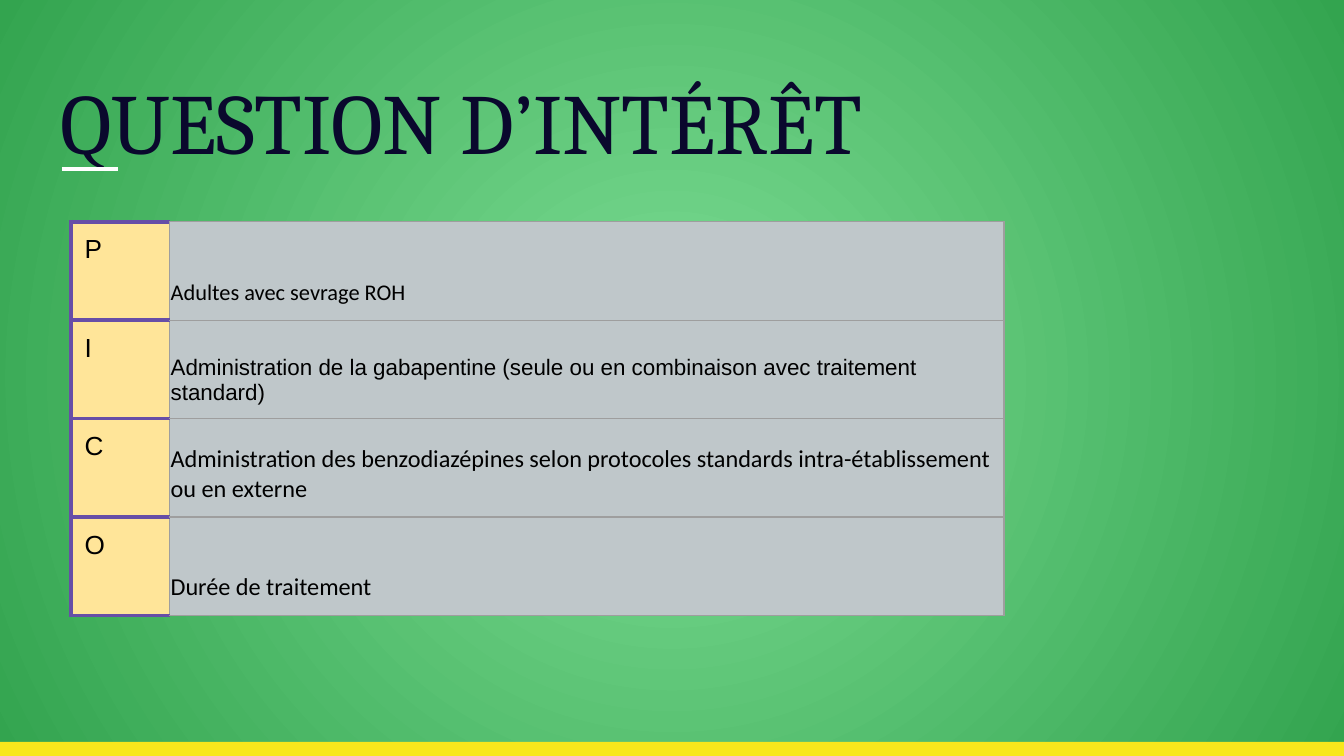
from pptx import Presentation
from pptx.dml.color import RGBColor
from pptx.enum.shapes import MSO_CONNECTOR, MSO_SHAPE
from pptx.enum.text import MSO_ANCHOR, PP_ALIGN
from pptx.oxml import parse_xml
from pptx.oxml.ns import nsdecls
from pptx.util import Inches, Pt

PAGE_WIDTH = Inches(10)
PAGE_HEIGHT = PAGE_WIDTH * 9 // 16
TABLE_HEIGHT = Inches(2.93)
GREY_BORDER = ("9E9E9E", 0.75)
PURPLE_BORDER = ("674EA7", 2.25)
LETTER_STYLE = {
    "fill": "FFE599",
    "borders": {"L": PURPLE_BORDER, "R": GREY_BORDER, "T": PURPLE_BORDER, "B": PURPLE_BORDER},
    "frame": {"margin_left": Inches(0.1), "margin_right": Inches(0.1),
              "margin_top": Inches(0.1), "margin_bottom": Inches(0.1),
              "vertical_anchor": MSO_ANCHOR.TOP},
}
ANSWER_STYLE = {
    "fill": "BFC7CA",
    "borders": dict.fromkeys("LRTB", GREY_BORDER),
    "frame": {"margin_left": Inches(0.01), "margin_right": Inches(0.01),
              "margin_top": Inches(0.01), "margin_bottom": Inches(0.1),
              "vertical_anchor": MSO_ANCHOR.BOTTOM},
}
PICO_ROWS = [
    ("P", "Adultes avec sevrage ROH", "Calibri", 12),
    ("I", "Administration de la gabapentine (seule ou en combinaison avec traitement standard)",
     "Arial", 12),
    ("C", "Administration des benzodiazépines selon protocoles standards "
     "intra-établissement ou en externe", "Calibri", 13),
    ("O", "Durée de traitement", "Calibri", 13),
]


def color(value):
    """Turn a hex string into a colour."""
    return RGBColor.from_string(value)


def apply_format(target, values):
    """Set each attribute named in the values."""
    for name, value in values.items():
        setattr(target, name, value)


def write_text(frame, text, font, size, shade):
    """Write one left-aligned paragraph and return it."""
    para = frame.paragraphs[0]
    para.alignment = PP_ALIGN.LEFT
    span = para.add_run()
    span.text = text
    apply_format(span.font, {"name": font, "size": Pt(size), "bold": False})
    span.font.color.rgb = color(shade)
    return para


def paint_background(page, center, edge):
    """Give the page a circular gradient."""
    page.background.fill.gradient()
    gradient = page.element.find(".//{*}gradFill")
    gradient.getparent().replace(gradient, parse_xml(
        f'<a:gradFill {nsdecls("a")} rotWithShape="0"><a:gsLst>'
        f'<a:gs pos="0"><a:srgbClr val="{center}"/></a:gs>'
        f'<a:gs pos="100000"><a:srgbClr val="{edge}"/></a:gs></a:gsLst>'
        '<a:path path="circle"><a:fillToRect l="50000" t="50000" r="50000" b="50000"/>'
        '</a:path></a:gradFill>'))


def add_footer_bar(page):
    """Add the yellow bar along the bottom."""
    top = Inches(5.52)
    bar = page.shapes.add_shape(
        MSO_SHAPE.RECTANGLE, Inches(0), top, PAGE_WIDTH, PAGE_HEIGHT - top)
    bar.shadow.inherit = False
    bar.fill.solid()
    bar.fill.fore_color.rgb = color("F8E71C")
    bar.line.fill.background()


def add_title_rule(page):
    """Add the short white line under the title."""
    rule = page.shapes.add_connector(
        MSO_CONNECTOR.STRAIGHT, Inches(0.46), Inches(1.26), Inches(0.88), Inches(1.26))
    rule.line.color.rgb = color("FFFFFF")
    rule.line.width = Pt(2.25)
    rule.element.spPr.append(parse_xml(f'<a:effectLst {nsdecls("a")}/>'))


def format_title(page, text):
    """Place and write the title."""
    title = page.shapes.title
    apply_format(title, {"left": Inches(0.34), "top": Inches(0.41),
                         "width": Inches(9.32), "height": Inches(0.71)})
    apply_format(title.text_frame, LETTER_STYLE["frame"] | {"word_wrap": True})
    para = write_text(title.text_frame, text, "Cambria", 45.9, "0A082D")
    para._p.get_or_add_pPr().set("marL", str(Inches(0.01)))


def format_cell(cell, style, text, font, size):
    """Write one table cell with its borders and fill."""
    write_text(cell.text_frame, text, font, size, "000000")
    properties = cell._tc.get_or_add_tcPr()
    for side, (shade, width) in style["borders"].items():
        properties.append(parse_xml(
            f'<a:ln{side} {nsdecls("a")} w="{Pt(width)}"><a:solidFill>'
            f'<a:srgbClr val="{shade}"/></a:solidFill></a:ln{side}>'))
    cell.fill.solid()
    cell.fill.fore_color.rgb = color(style["fill"])
    apply_format(cell, style["frame"])


def add_pico_table(page):
    """Add the table of PICO letters and answers."""
    table = page.shapes.add_table(
        len(PICO_ROWS), 2, Inches(0.53), Inches(1.65), Inches(6.94), TABLE_HEIGHT).table
    apply_format(table, {"first_row": False, "horz_banding": False})
    for column, width in zip(table.columns, (0.73, 6.21)):
        column.width = Inches(width)
    for row, (letter, answer, font, size) in zip(table.rows, PICO_ROWS):
        row.height = TABLE_HEIGHT // len(PICO_ROWS)
        format_cell(row.cells[0], LETTER_STYLE, letter, "Arial", 14)
        format_cell(row.cells[1], ANSWER_STYLE, answer, font, size)


def main():
    """Build and save the deck."""
    deck = Presentation()
    apply_format(deck, {"slide_width": PAGE_WIDTH, "slide_height": PAGE_HEIGHT})
    page = deck.slides.add_slide(deck.slide_layouts[5])
    paint_background(page, "7CDD94", "33A44F")
    add_footer_bar(page)
    add_title_rule(page)
    format_title(page, "QUESTION D’INTÉRÊT")
    add_pico_table(page)
    deck.save("out.pptx")


if __name__ == "__main__":
    main()
